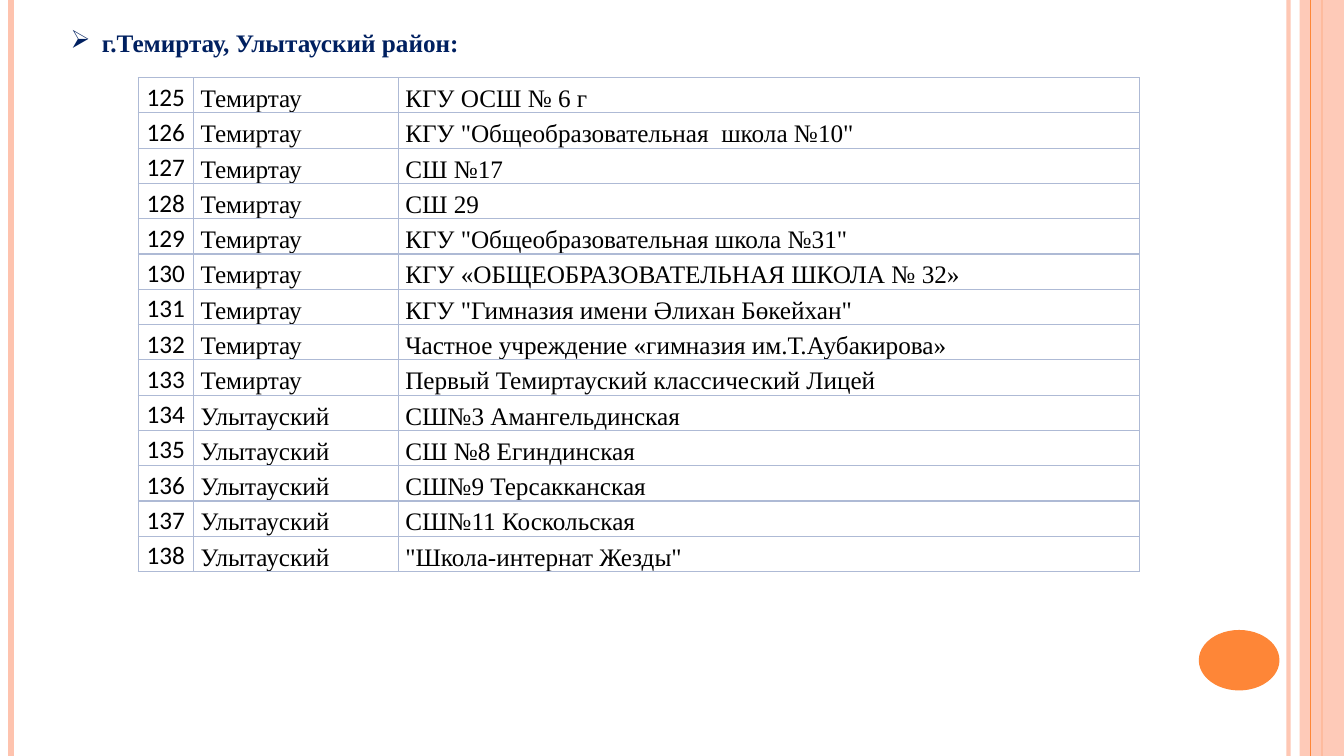
import pptx
import pptx.chart.data
import pptx.dml.color
import pptx.enum.shapes
import pptx.enum.text
import pptx.oxml
import pptx.oxml.ns
import pptx.util
from pptx.util import Inches

COLORS = {
    "peach": "FEC3AE",
    "orange": "FE8637",
    "border": "AEBAD5",
    "navy": "002060",
    "black": "000000",
}
FIRST_NUMBER = 125
SCHOOLS = {
    "Темиртау": [
        "КГУ ОСШ № 6 г",
        'КГУ "Общеобразовательная  школа №10"',
        "СШ №17",
        "СШ 29",
        'КГУ "Общеобразовательная школа №31"',
        "КГУ «ОБЩЕОБРАЗОВАТЕЛЬНАЯ ШКОЛА № 32»",
        'КГУ "Гимназия имени Әлихан Бөкейхан"',
        "Частное учреждение «гимназия им.Т.Аубакирова»",
        "Первый Темиртауский классический Лицей",
    ],
    "Улытауский": [
        "СШ№3 Амангельдинская",
        "СШ №8 Егиндинская",
        "СШ№9 Терсакканская",
        "СШ№11 Коскольская",
        '"Школа-интернат Жезды"',
    ],
}


class SlideBuilder:
    """Draws styled elements on the current slide."""

    serif = "Times New Roman"
    sans = "Calibri"
    size = pptx.util.Pt(18)

    def __init__(self, slide):
        self.slide = slide

    def color(self, name):
        return pptx.dml.color.RGBColor.from_string(COLORS[name])

    def xml(self, parent, markup):
        declaration = pptx.oxml.ns.nsdecls("a")
        element = pptx.oxml.parse_xml(markup.replace(" xmlns", f" {declaration}", 1))
        parent.append(element)

    def set_alpha(self, shape, percent):
        for color in shape._element.spPr.iter(pptx.oxml.ns.qn("a:srgbClr")):
            self.xml(color, f'<a:alpha xmlns val="{percent * 1000}"/>')

    def format_runs(self, paragraph, font, color, bold=False):
        for run in paragraph.runs:
            run.font.name = font
            run.font.size = self.size
            run.font.bold = bold
            run.font.color.rgb = self.color(color)

    def stripe(self, x, color, width, alpha=100):
        line = self.slide.shapes.add_connector(
            pptx.enum.shapes.MSO_CONNECTOR.STRAIGHT,
            Inches(x), Inches(0), Inches(x), Inches(7.5))
        line.line.color.rgb = self.color(color)
        line.line.width = pptx.util.Pt(width)
        if alpha < 100:
            self.set_alpha(line, alpha)
        self.xml(line._element.spPr, "<a:effectLst xmlns/>")

    def shape(self, kind, box, color, alpha=100):
        shape = self.slide.shapes.add_shape(kind, *map(Inches, box))
        shape.shadow.inherit = False
        shape.fill.solid()
        shape.fill.fore_color.rgb = self.color(color)
        shape.line.fill.background()
        if alpha < 100:
            self.set_alpha(shape, alpha)

    def title(self, text, box):
        title = self.slide.shapes.title
        title.left, title.top, title.width, title.height = map(Inches, box)
        frame = title.text_frame
        frame.text = text
        frame.word_wrap = False
        frame.auto_size = pptx.enum.text.MSO_AUTO_SIZE.SHAPE_TO_FIT_TEXT
        frame.vertical_anchor = pptx.enum.text.MSO_ANCHOR.TOP
        paragraph = frame.paragraphs[0]
        paragraph.alignment = pptx.enum.text.PP_ALIGN.LEFT
        self.format_runs(paragraph, self.serif, "navy", bold=True)
        properties = paragraph._p.get_or_add_pPr()
        properties.set("marL", str(Inches(0.31)))
        properties.set("indent", str(Inches(-0.31)))
        self.xml(properties, '<a:buChar xmlns char="➢"/>')

    def cell(self, cell, text, font, alignment):
        cell.text_frame.text = text
        cell.vertical_anchor = pptx.enum.text.MSO_ANCHOR.BOTTOM
        cell.margin_left = cell.margin_right = Inches(0.07)
        cell.margin_top = cell.margin_bottom = 0
        paragraph = cell.text_frame.paragraphs[0]
        paragraph.alignment = alignment
        paragraph.line_spacing = 1.15
        self.format_runs(paragraph, font, "black")
        for side in "LRTB":
            self.xml(
                cell._tc.get_or_add_tcPr(),
                f'<a:ln{side} xmlns w="{pptx.util.Pt(1)}"><a:solidFill>'
                f'<a:srgbClr val="{COLORS["border"]}"/></a:solidFill></a:ln{side}>')
        cell.fill.background()

    def table(self, records, left, top, widths, row_height):
        frame = self.slide.shapes.add_table(
            len(records), len(widths), Inches(left), Inches(top),
            Inches(sum(widths)), Inches(row_height * len(records)))
        table = frame.table
        table.first_row = table.horz_banding = False
        for column, width in zip(table.columns, widths):
            column.width = Inches(width)
        align = pptx.enum.text.PP_ALIGN
        styles = [(self.sans, align.CENTER), (self.serif, align.LEFT), (self.serif, align.LEFT)]
        for row, record in zip(table.rows, records):
            row.height = Inches(row_height)
            for cell, text, (font, alignment) in zip(row.cells, record, styles):
                self.cell(cell, text, font, alignment)


def main():
    presentation = pptx.Presentation()
    presentation.slide_width = Inches(13.33)
    presentation.slide_height = Inches(7.5)
    builder = SlideBuilder(presentation.slides.add_slide(presentation.slide_layouts[5]))
    shapes = pptx.enum.shapes.MSO_SHAPE

    builder.stripe(12.78, "peach", 3, alpha=93)
    builder.stripe(0.11, "peach", 4.5)
    builder.stripe(13.11, "orange", 1.5)
    builder.shape(shapes.RECTANGLE, (12.89, 0, 0.44, 7.5), "peach", alpha=87)
    builder.stripe(13, "orange", 0.75)
    builder.shape(shapes.OVAL, (11.89, 6.25, 0.8, 0.6), "orange")

    schools = [(district, school) for district, names in SCHOOLS.items() for school in names]
    records = [(str(number), *entry) for number, entry in enumerate(schools, FIRST_NUMBER)]
    builder.table(records, 1.37, 0.77, (0.55, 2.03, 7.35), 0.35)
    builder.title("г.Темиртау, Улытауский район:", (0.6, 0.22, 4.14, 0.4))
    presentation.save("out.pptx")


if __name__ == "__main__":
    main()
